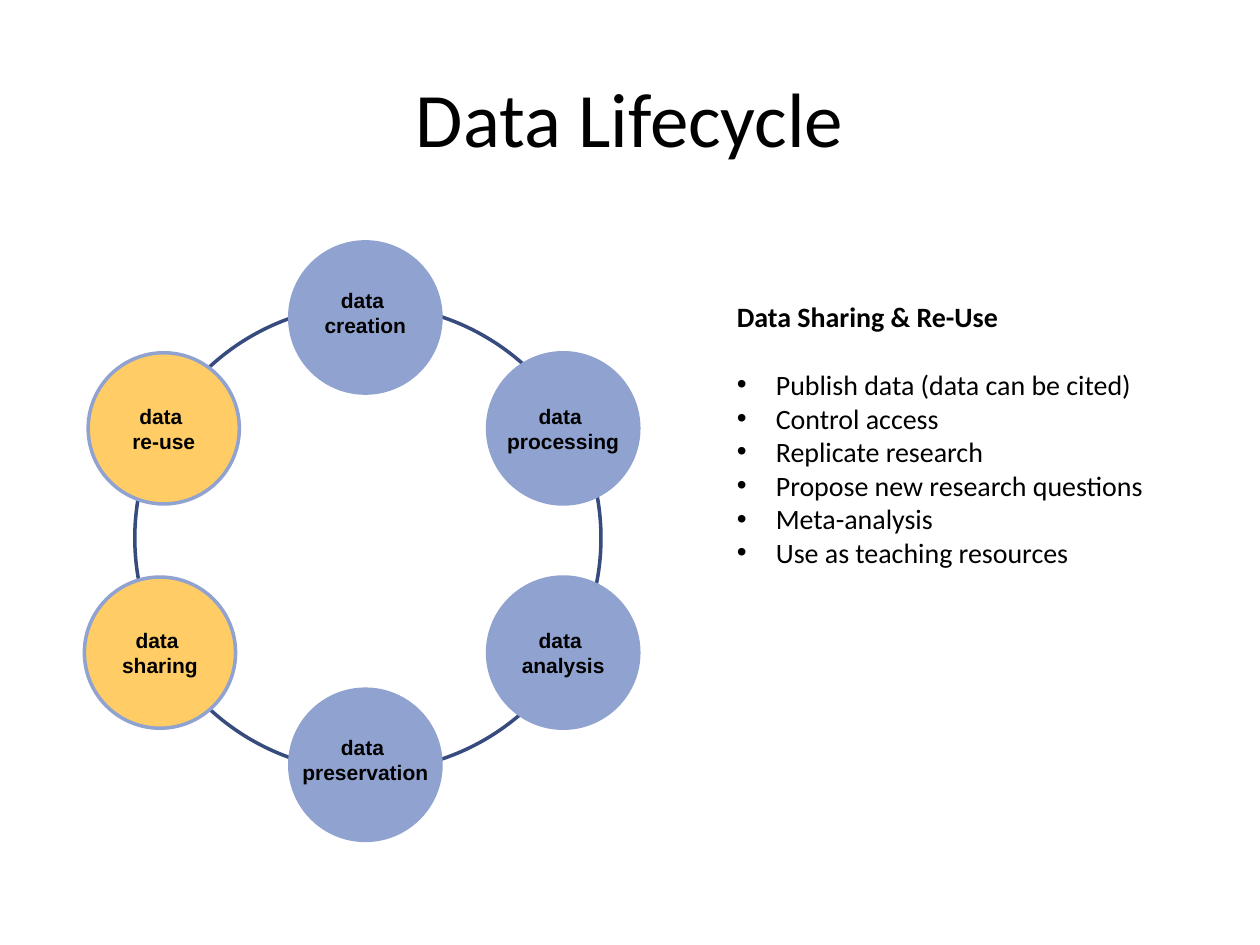
from lxml import etree
from pptx import Presentation
from pptx import util as u
from pptx.dml import color
from pptx.enum import shapes, text
from pptx.oxml import ns

COLORS = {
    "ink": "000000",
    "ring": "374B7F",
    "blue": "90A2CF",
    "highlight": "FFCC66",
}
CIRCLE = 1.2
RING_SIZE = 3.7
LABEL_HEIGHT = 0.5

STAGES = [
    ("creation", 1.63, 0, 0.31, 0.86, "blue"),
    ("preservation", 1.63, 3.55, 0.31, 1.21, "blue"),
    ("processing", 3.2, 0.88, 0.35, 1.1, "blue"),
    ("analysis", 3.2, 2.66, 0.35, 0.86, "blue"),
    ("re-use", 0.03, 0.88, 0.35, 0.71, "highlight"),
    ("sharing", 0, 2.66, 0.35, 0.81, "highlight"),
]
ACTIVITIES = [
    "Publish data (data can be cited)",
    "Control access",
    "Replicate research",
    "Propose new research questions",
    "Meta-analysis",
    "Use as teaching resources",
]


def rgb(name):
    return color.RGBColor.from_string(COLORS[name])


def add_text_box(slide, left, top, width, height, wrap=True, anchor=text.MSO_ANCHOR.TOP):
    box = slide.shapes.add_textbox(*map(u.Inches, (left, top, width, height)))
    frame = box.text_frame
    frame.word_wrap = wrap
    frame.vertical_anchor = anchor
    return frame


def write_paragraph(frame, content, size, font="Calibri", bold=False,
                    align=text.PP_ALIGN.LEFT, space_after=0, bullet=False):
    paragraph = frame.paragraphs[0]
    if paragraph.runs:
        paragraph = frame.add_paragraph()
    paragraph.alignment = align
    paragraph.space_after = u.Pt(space_after)
    run = paragraph.add_run()
    run.text = content
    run.font.size = u.Pt(size)
    run.font.name = font
    run.font.bold = bold
    run.font.color.rgb = rgb("ink")
    if bullet:
        properties = paragraph._p.get_or_add_pPr()
        indent = u.Inches(0.31)
        properties.set("marL", str(indent))
        properties.set("indent", str(-indent))
        etree.SubElement(properties, ns.qn("a:buFont"), typeface="Arial")
        etree.SubElement(properties, ns.qn("a:buChar"), char="•")


def add_circle(slide, left, top, size, line, fill=None):
    circle = slide.shapes.add_shape(
        shapes.MSO_SHAPE.OVAL, *map(u.Inches, (left, top, size, size)))
    circle.shadow.inherit = False
    circle.line.color.rgb = rgb(line)
    circle.line.width = u.Pt(2)
    if fill:
        circle.fill.solid()
        circle.fill.fore_color.rgb = rgb(fill)
    else:
        circle.fill.background()


def add_title(slide, left, top, width, height):
    frame = add_text_box(slide, left, top, width, height, anchor=text.MSO_ANCHOR.MIDDLE)
    write_paragraph(frame, "Data Lifecycle", size=44, align=text.PP_ALIGN.CENTER)


def add_stage(slide, left, top, name, label_offset, label_width, fill):
    add_circle(slide, left, top, CIRCLE, "blue", fill)
    label_left = left + (CIRCLE - label_width) / 2
    frame = add_text_box(slide, label_left, top + label_offset,
                         label_width, LABEL_HEIGHT, wrap=False)
    for line in ("data ", name):
        write_paragraph(frame, line, size=12, font="Arial", bold=True,
                        align=text.PP_ALIGN.CENTER)


def add_lifecycle(slide, left, top):
    add_circle(slide, left + 0.4, top + 0.5, RING_SIZE, "ring")
    for name, x, y, label_offset, label_width, fill in STAGES:
        add_stage(slide, left + x, top + y, name, label_offset, label_width, fill)


def add_activities(slide, left, top, width, height):
    frame = add_text_box(slide, left, top, width, height)
    write_paragraph(frame, "Data Sharing & Re-Use", size=16, bold=True, space_after=19.5)
    for activity in ACTIVITIES:
        write_paragraph(frame, activity, size=16, bullet=True)


def main():
    presentation = Presentation()
    presentation.slide_width = u.Inches(10)
    presentation.slide_height = u.Inches(7.5)
    slide = presentation.slides.add_slide(presentation.slide_layouts[6])
    add_title(slide, 0.5, 0.3, 9, 1.25)
    add_lifecycle(slide, 0.67, 1.92)
    add_activities(slide, 5.75, 2.33, 4, 1.32)
    presentation.save("out.pptx")


if __name__ == "__main__":
    main()
